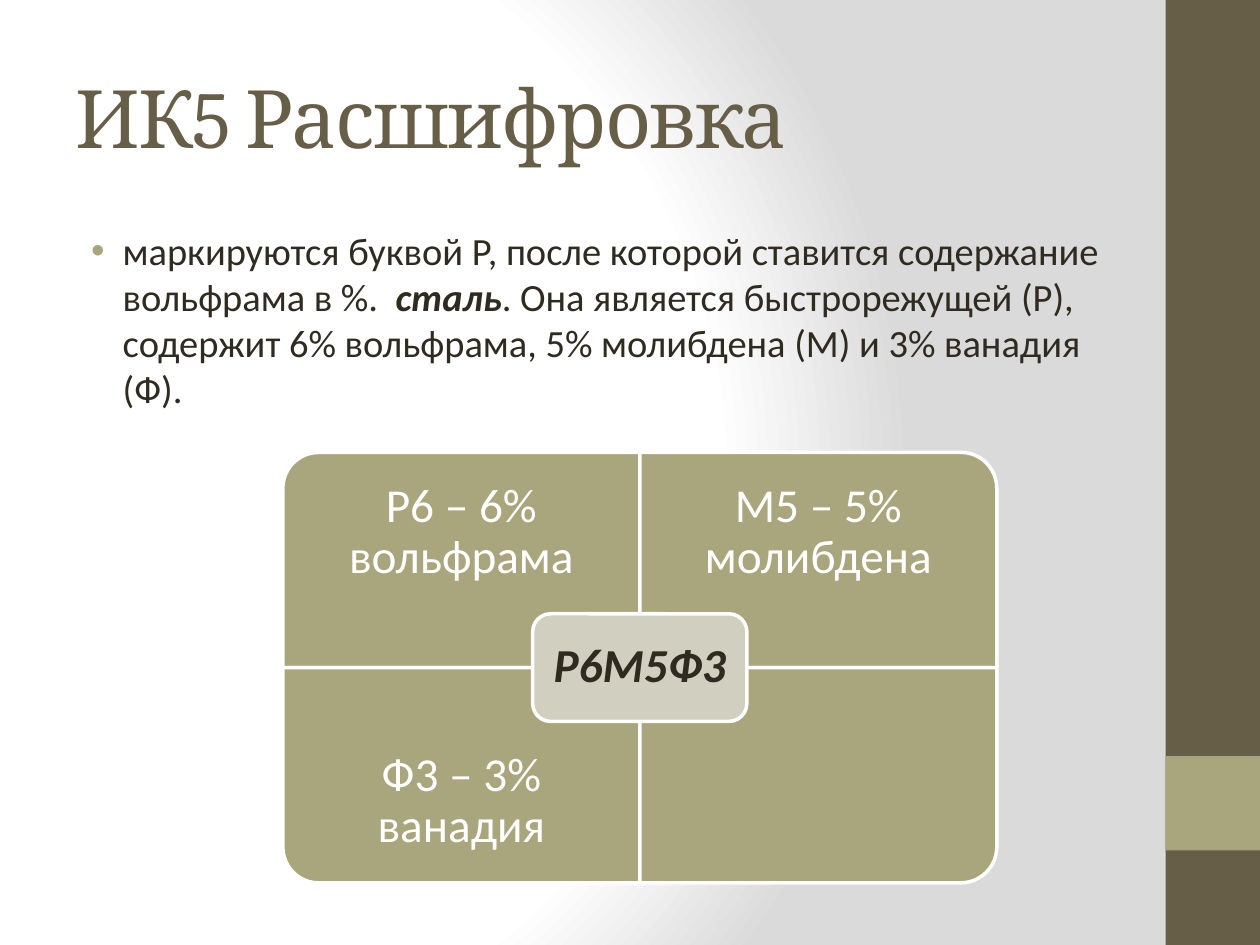
import pptx
import pptx.dml.color
import pptx.enum.shapes
import pptx.enum.text
import pptx.oxml
import pptx.oxml.ns
import pptx.util
from dataclasses import dataclass

Pt = pptx.util.Pt
SHAPES = pptx.enum.shapes.MSO_SHAPE
ALIGN = pptx.enum.text.PP_ALIGN
ANCHOR = pptx.enum.text.MSO_ANCHOR
DRAWING = pptx.oxml.ns.nsdecls("a")


@dataclass(frozen=True)
class Theme:
    brown: str = "675E47"
    olive: str = "A9A57C"
    pale: str = "D1CFBF"
    ink: str = "2F2B20"
    white: str = "FFFFFF"
    grey: str = "DADADA"
    heading_font: str = "Cambria"
    body_font: str = "Calibri"
    title_size: float = 46
    body_size: float = 22
    diagram_size: float = 27


THEME = Theme()


def rgb(color):
    return pptx.dml.color.RGBColor.from_string(color)


def add_block(page, kind, box, fill, line=None, rotation=0):
    left, top, width, height = box
    block = page.shapes.add_shape(kind, Pt(left), Pt(top), Pt(width), Pt(height))
    block.shadow.inherit = False
    block.rotation = rotation
    block.fill.solid()
    block.fill.fore_color.rgb = rgb(fill)
    if line:
        block.line.color.rgb = rgb(line)
        block.line.width = Pt(2)
    else:
        block.line.fill.background()
    return block


def add_text(page, box, spans, *, size, color, font=THEME.body_font, align=ALIGN.LEFT,
             anchor=ANCHOR.TOP, insets=(7.2, 3.6), line_spacing=None,
             before=0, after=0, tracking=None):
    """Place one paragraph; spans are (text, emphasised) pairs."""
    left, top, width, height = box
    frame = page.shapes.add_textbox(Pt(left), Pt(top), Pt(width), Pt(height)).text_frame
    frame.word_wrap = True
    frame.vertical_anchor = anchor
    frame.margin_left = frame.margin_right = Pt(insets[0])
    frame.margin_top = frame.margin_bottom = Pt(insets[1])
    para = frame.paragraphs[0]
    para.alignment = align
    para.space_before, para.space_after = Pt(before), Pt(after)
    if line_spacing:
        para.line_spacing = line_spacing
    for text, emphasised in spans:
        span = para.add_run()
        span.text = text
        span.font.name = font
        span.font.size = Pt(size)
        span.font.color.rgb = rgb(color)
        span.font.bold = span.font.italic = emphasised
        if tracking:
            span.font._element.set("spc", str(tracking))
    return para


def add_bullet(para, color, indent, hanging):
    props = para._p.get_or_add_pPr()
    props.set("marL", str(Pt(indent)))
    props.set("indent", str(-Pt(hanging)))
    for xml in (f'<a:buClr {DRAWING}><a:srgbClr val="{color}"/></a:buClr>',
                f'<a:buFont {DRAWING} typeface="Arial"/>',
                f'<a:buChar {DRAWING} char="•"/>'):
        props.append(pptx.oxml.parse_xml(xml))


def paint_background(page):
    page.background.fill.solid()
    holder = page.element.find(".//" + pptx.oxml.ns.qn("p:bgPr"))
    stops = "".join(
        f'<a:gs pos="{position * 1000}"><a:srgbClr val="{color}"/></a:gs>'
        for position, color in ((0, THEME.white), (75, THEME.white), (100, THEME.grey)))
    holder.replace(holder[0], pptx.oxml.parse_xml(
        f'<a:gradFill {DRAWING} rotWithShape="1"><a:gsLst>{stops}</a:gsLst>'
        '<a:path path="circle"><a:fillToRect l="20000" t="50000" r="100000" b="50000"/>'
        '</a:path></a:gradFill>'))


def draw_sidebar(page, box):
    left, top, width, height = box
    add_block(page, SHAPES.RECTANGLE, box, THEME.brown)
    add_block(page, SHAPES.RECTANGLE, (left, top + height * 0.8, width, width), THEME.olive)


def draw_title(page, box):
    add_text(page, box, [("ИК5 Расшифровка", False)], size=THEME.title_size,
             color=THEME.brown, font=THEME.heading_font, anchor=ANCHOR.MIDDLE, tracking=-100)


def draw_body(page, box):
    spans = [
        ("маркируются буквой Р, после которой ставится содержание вольфрама в %.  ", False),
        ("сталь", True),
        (". Она является быстрорежущей (Р), содержит 6% вольфрама, "
         "5% молибдена (М) и 3% ванадия (Ф).", False),
    ]
    para = add_text(page, box, spans, size=THEME.body_size, color=THEME.ink,
                    before=THEME.body_size * 0.2)
    add_bullet(para, THEME.olive, 27, 18)


def draw_matrix(page, box):
    left, top, width, height = box
    cell_width, cell_height = width / 2, height / 2
    label_height = cell_height * 0.75
    label_style = dict(size=THEME.diagram_size, align=ALIGN.CENTER, anchor=ANCHOR.MIDDLE,
                       line_spacing=0.9, after=THEME.diagram_size * 0.35)

    # Quadrants, each turned so that its round corner faces outwards
    quadrants = [(0, 0, 270, "Р6 – 6% вольфрама"), (0, 1, 0, "М5 – 5% молибдена"),
                 (1, 0, 180, "Ф3 – 3% ванадия"), (1, 1, 90, None)]
    for row, column, rotation, label in quadrants:
        x, y = left + column * cell_width, top + row * cell_height
        across, down = cell_width, cell_height
        if rotation % 180:
            across, down = down, across
        add_block(page, SHAPES.ROUND_1_RECTANGLE,
                  (x + (cell_width - across) / 2, y + (cell_height - down) / 2, across, down),
                  THEME.olive, THEME.white, rotation)
        if label:
            label_top = y + row * (cell_height - label_height)
            add_text(page, (x, label_top, cell_width, label_height), [(label, False)],
                     color=THEME.white, insets=(15, 15), **label_style)

    # Centre plate
    plate_width, plate_height = cell_width * 0.6, cell_height * 0.5
    plate = (left + (width - plate_width) / 2, top + (height - plate_height) / 2,
             plate_width, plate_height)
    add_block(page, SHAPES.ROUNDED_RECTANGLE, plate, THEME.pale, THEME.white)
    add_text(page, plate, [("Р6М5Ф3", True)], color=THEME.ink, insets=(10, 10), **label_style)


def main():
    deck = pptx.Presentation()
    deck.slide_width, deck.slide_height = Pt(720), Pt(540)
    page = deck.slides.add_slide(deck.slide_layouts[6])
    paint_background(page)
    draw_sidebar(page, (666, 0, 54, 540))
    draw_title(page, (36, 21.6, 600, 90))
    draw_body(page, (36, 126, 600, 378))
    draw_matrix(page, (161.6, 258.5, 408, 246))
    deck.save("out.pptx")


if __name__ == "__main__":
    main()
